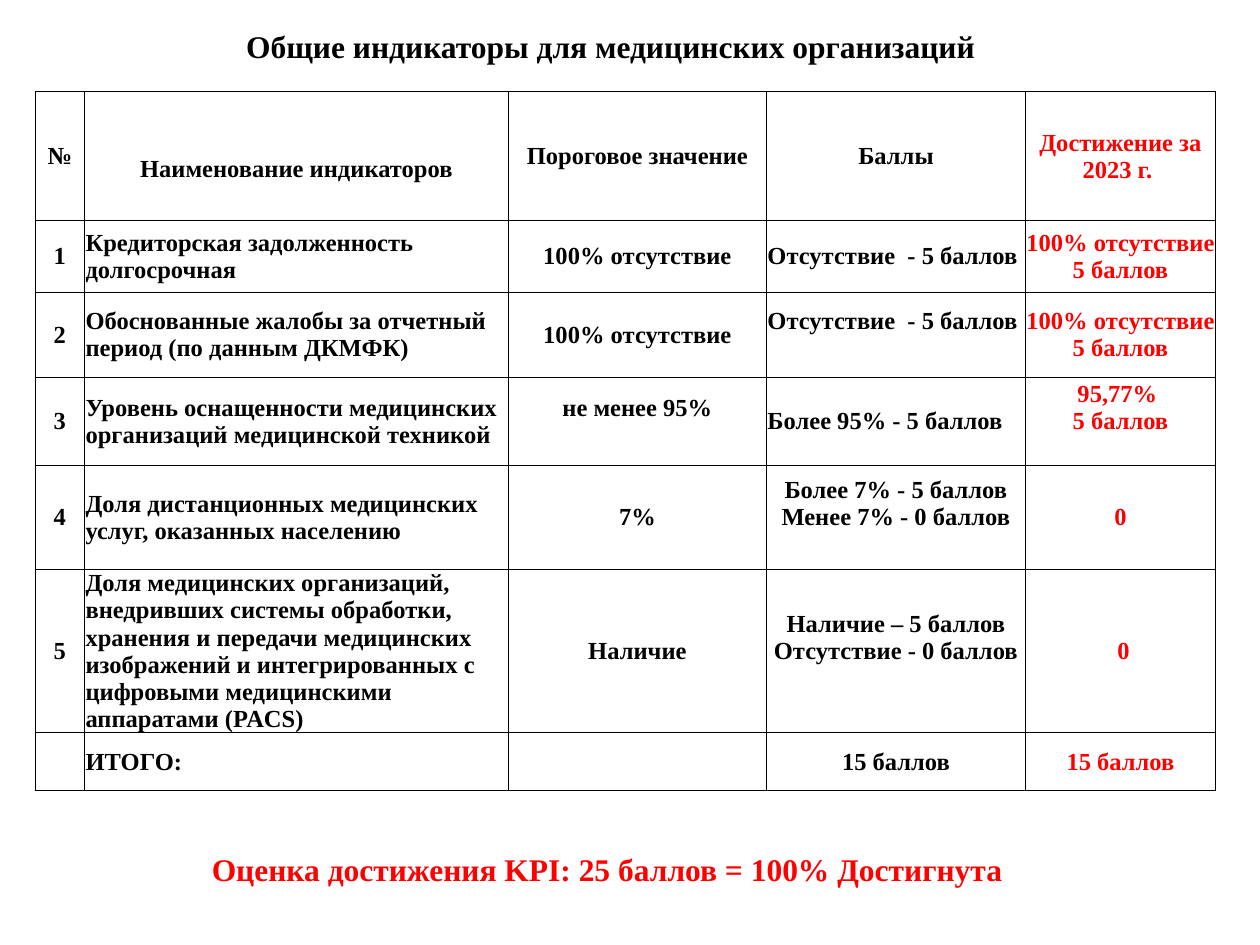
from pptx import Presentation
from pptx.dml.color import RGBColor
from pptx.enum.text import MSO_ANCHOR, PP_ALIGN
from pptx.oxml import parse_xml
from pptx.oxml.ns import nsdecls
from pptx.util import Pt

FONT = "Times New Roman"
BLACK, RED, WHITE = "000000", "FF0000", "FFFFFF"
LEFT = 20
LINE_HEIGHT = 15.5
COLUMN_WIDTHS = [28.4, 242.1, 147.6, 147.9, 108.7]
ROW_HEIGHTS = [73.4, 41.1, 48.6, 50.3, 59.4, 87.1, 33.1]
ROWS = [
    ["№", "Наименование индикаторов", "Пороговое значение", "Баллы", "Достижение за 2023 г. "],
    ["1", "Кредиторская задолженность долгосрочная", "100% отсутствие",
     "Отсутствие  - 5 баллов", "100% отсутствие 5 баллов"],
    ["2", "Обоснованные жалобы за отчетный период (по данным ДКМФК)", "100% отсутствие",
     "Отсутствие  - 5 баллов", "100% отсутствие 5 баллов"],
    ["3", "Уровень оснащенности медицинских организаций медицинской техникой", "не менее 95%",
     "Более 95% - 5 баллов", "95,77% \n5 баллов"],
    ["4", "Доля дистанционных медицинских услуг, оказанных населению", "7%",
     "Более 7% - 5 баллов\nМенее 7% - 0 баллов", "0"],
    ["5", "Доля медицинских организаций, внедривших системы обработки, хранения и передачи "
     "медицинских изображений и интегрированных с цифровыми медицинскими аппаратами (PACS)",
     "Наличие", "Наличие – 5 баллов\nОтсутствие - 0 баллов", " 0"],
    ["", "ИТОГО:", "", "15 баллов", "15 баллов"],
]
LOWERED_CELLS = {(0, 1)}
RAISED_CELLS = {(2, 3), (3, 2), (3, 4), (4, 3), (5, 3)}
LEFT_ALIGNED_SCORES = {(1, 3), (2, 3), (3, 3)}


def color(value):
    return RGBColor.from_string(value)


def format_text(frame, text, size, fill, alignment):
    frame.text = text
    for paragraph in frame.paragraphs:
        paragraph.alignment = alignment
        paragraph.font.name = FONT
        paragraph.font.size = Pt(size)
        paragraph.font.bold = True
        paragraph.font.color.rgb = color(fill)


def format_heading(box, text, top, width, fill):
    box.left, box.top, box.width, box.height = Pt(LEFT), Pt(top), Pt(width), Pt(24)
    frame = box.text_frame
    frame.word_wrap = True
    frame.vertical_anchor = MSO_ANCHOR.MIDDLE
    frame.margin_top = frame.margin_bottom = 0
    format_text(frame, text, 18, fill, PP_ALIGN.CENTER)
    frame.paragraphs[0].line_spacing = 0.9


def add_borders(cell):
    properties = cell._tc.get_or_add_tcPr()
    for position, side in enumerate(["lnL", "lnR", "lnT", "lnB"]):
        border = parse_xml(
            f'<a:{side} {nsdecls("a")} w="{Pt(0.5)}"><a:solidFill>'
            f'<a:srgbClr val="{BLACK}"/></a:solidFill></a:{side}>'
        )
        properties.insert(position, border)


def format_cell(cell, text, row, column):
    cell.fill.solid()
    cell.fill.fore_color.rgb = color(WHITE)
    cell.vertical_anchor = MSO_ANCHOR.MIDDLE
    cell.margin_left = cell.margin_right = Pt(0.5)
    cell.margin_top = Pt(LINE_HEIGHT if (row, column) in LOWERED_CELLS else 0.5)
    cell.margin_bottom = Pt(LINE_HEIGHT if (row, column) in RAISED_CELLS else 0)
    is_name = column == 1 and row > 0
    is_left = is_name or (row, column) in LEFT_ALIGNED_SCORES
    alignment = PP_ALIGN.LEFT if is_left else PP_ALIGN.CENTER
    format_text(cell.text_frame, text, 14, RED if column == 4 else BLACK, alignment)
    add_borders(cell)


def add_indicator_table(page):
    frame = page.shapes.add_table(
        len(ROWS), len(COLUMN_WIDTHS), Pt(LEFT), Pt(52.5),
        Pt(sum(COLUMN_WIDTHS)), Pt(sum(ROW_HEIGHTS)),
    )
    table = frame.table
    table.first_row = table.horz_banding = False
    for column, width in zip(table.columns, COLUMN_WIDTHS):
        column.width = Pt(width)
    for row, height in zip(table.rows, ROW_HEIGHTS):
        row.height = Pt(height)
    for row, texts in enumerate(ROWS):
        for column, text in enumerate(texts):
            format_cell(table.cell(row, column), text, row, column)


def main():
    deck = Presentation()
    deck.slide_width, deck.slide_height = Pt(720), Pt(540)
    page = deck.slides.add_slide(deck.slide_layouts[5])
    format_heading(page.shapes.title, "Общие индикаторы для медицинских организаций", 15.5, 658, BLACK)
    add_indicator_table(page)
    summary = page.shapes.add_textbox(Pt(LEFT), Pt(486), Pt(654), Pt(24))
    format_heading(summary, "Оценка достижения KPI: 25 баллов = 100% Достигнута", 486, 654, RED)
    deck.save("out.pptx")


if __name__ == "__main__":
    main()
